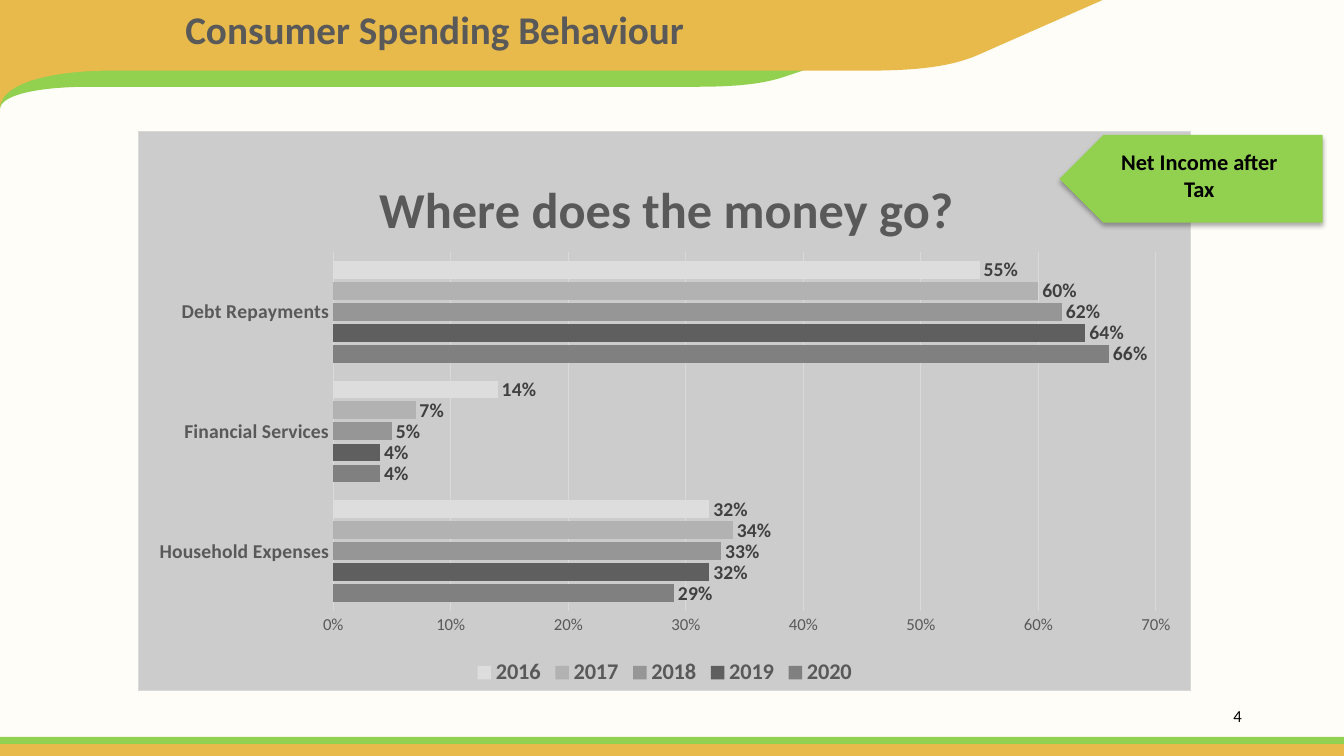
from lxml import etree
from pptx import Presentation
from pptx.chart.data import CategoryChartData
from pptx.dml.color import RGBColor
from pptx.enum import chart as kinds, shapes, text
from pptx.oxml import parse_xml
from pptx.oxml.ns import nsdecls, qn
from pptx.util import Cm, Pt

CREAM = RGBColor(0xFF, 0xFD, 0xF8)
GOLD = RGBColor(0xE7, 0xBA, 0x4B)
GREEN = RGBColor(0x92, 0xD0, 0x50)
BLACK = RGBColor(0, 0, 0)
GREY = RGBColor(0x59, 0x59, 0x59)
DARK = RGBColor(0x40, 0x40, 0x40)
PALE = RGBColor(0xD9, 0xD9, 0xD9)
PANEL = RGBColor(0xCC, 0xCC, 0xCC)
FONT = "Calibri"
WIDE, HIGH = 33.87, 19.05

GROUPS = ["Household Expenses", "Financial Services", "Debt Repayments"]
YEARS = [
    ("2020", (0.29, 0.04, 0.66), RGBColor(0x80, 0x80, 0x80)),
    ("2019", (0.32, 0.04, 0.64), RGBColor(0x5F, 0x5F, 0x5F)),
    ("2018", (0.33, 0.05, 0.62), RGBColor(0x96, 0x96, 0x96)),
    ("2017", (0.34, 0.07, 0.60), RGBColor(0xB2, 0xB2, 0xB2)),
    ("2016", (0.32, 0.14, 0.55), RGBColor(0xDD, 0xDD, 0xDD)),
]


def place(box):
    return [Cm(n) for n in box]


def style(font, size, color, bold=False):
    font.name, font.size, font.bold = FONT, Pt(size), bold
    font.color.rgb = color


def paint(shape, color):
    shape.shadow.inherit = False
    shape.fill.solid()
    shape.fill.fore_color.rgb = color
    shape.line.fill.background()


def write(shape, words, size, color, align, bold=False):
    frame = shape.text_frame
    frame.word_wrap = True
    frame.vertical_anchor = text.MSO_ANCHOR.TOP
    frame.text = words
    para = frame.paragraphs[0]
    para.alignment = align
    style(para.font, size, color, bold)


def curve(a, b, c, d, steps=24):
    for i in range(steps + 1):
        t = i / steps
        s = 1 - t
        yield tuple(s**3 * p + 3 * s * s * t * q + 3 * s * t * t * r + t**3 * v
                    for p, q, r, v in zip(a, b, c, d))


def wave(slide, box, color):
    left, top, width, height = box
    dots = [(0, 0), (1, 0),
            *curve((0.886, 0.51), (0.858, 0.63), (0.823, 0.65), (0.784, 0.65)),
            *curve((0.099, 0.65), (0.055, 0.65), (0, 0.74), (0, 1))]
    dots = [(Cm(left + x * width), Cm(top + y * height)) for x, y in dots]
    pen = slide.shapes.build_freeform(*dots[0])
    pen.add_line_segments(dots[1:], close=True)
    paint(pen.convert_to_shape(), color)


def header(slide, box):
    left, top, width, height = box
    wave(slide, (left, top + 1.12, width * 0.8, height * 0.6), GREEN)
    wave(slide, box, GOLD)
    title = slide.shapes.title
    slide.shapes._spTree.append(title._element)
    title.left, title.top, title.width, title.height = place((left, top, 21.9, 3))
    write(title, "Consumer Spending Behaviour", 28, GREY, text.PP_ALIGN.CENTER, True)


def footer(slide, box):
    left, top, width, height = box
    for drop, color in ((0, GREEN), (0.18, GOLD)):
        band = slide.shapes.add_shape(
            shapes.MSO_SHAPE.RECTANGLE,
            *place((left, top + drop, width, height - drop)))
        paint(band, color)
    page = slide.shapes.add_textbox(*place((left + 23.93, top - 0.92, 7.62, 1.02)))
    write(page, "4", 12, BLACK, text.PP_ALIGN.RIGHT)


def layout(node, x, y, size=None):
    old = node.find(qn("c:layout"))
    if old is not None:
        node.remove(old)
    parts = [("xMode", "edge"), ("yMode", "edge"), ("x", x), ("y", y)]
    if size:
        parts.insert(0, ("layoutTarget", "inner"))
        parts += zip("wh", size)
    new = parse_xml(f"<c:layout {nsdecls('c')}><c:manualLayout/></c:layout>")
    for name, val in parts:
        etree.SubElement(new[0], qn(f"c:{name}")).set("val", str(val))
    return new


def spending(slide, box):
    data = CategoryChartData(number_format="0%")
    data.categories = GROUPS
    for name, vals, _ in YEARS:
        data.add_series(name, vals)
    chart = slide.shapes.add_chart(
        kinds.XL_CHART_TYPE.BAR_CLUSTERED, *place(box), data).chart
    style(chart.font, 10, BLACK)

    chart.has_title = True
    head = chart.chart_title
    head.include_in_layout = False
    head.text_frame.text = "Where does the money go?"
    style(head.text_frame.paragraphs[0].font, 36, GREY, True)
    head._element.find(qn("c:tx")).addnext(layout(head._element, 0.22, 0.06))
    area = chart._chartSpace.chart.plotArea
    area.insert(0, layout(area, 0.185, 0.215, (0.782, 0.643)))

    chart.has_legend = True
    chart.legend.position = kinds.XL_LEGEND_POSITION.BOTTOM
    chart.legend.include_in_layout = False
    style(chart.legend.font, 16, GREY, True)

    plot = chart.plots[0]
    plot.gap_width, plot.overlap, plot.vary_by_categories = 100, -17, False
    for bar, (_, _, color) in zip(plot.series, YEARS):
        bar.format.fill.solid()
        bar.format.fill.fore_color.rgb = color
        tags = bar.data_labels
        tags.show_value = True
        tags.number_format, tags.number_format_is_linked = "0%", False
        tags.position = kinds.XL_LABEL_POSITION.OUTSIDE_END
        style(tags.font, 14, DARK, True)

    cats, vals = chart.category_axis, chart.value_axis
    for axis in (cats, vals):
        axis.major_tick_mark = axis.minor_tick_mark = kinds.XL_TICK_MARK.NONE
    style(cats.tick_labels.font, 14, GREY, True)
    style(vals.tick_labels.font, 12, GREY)
    vals.minimum_scale, vals.maximum_scale, vals.major_unit = 0, 0.7, 0.1
    vals.tick_labels.number_format = "0%"
    vals.tick_labels.number_format_is_linked = False
    vals.format.line.fill.background()
    vals.has_major_gridlines = True
    for line in (cats.format.line, vals.major_gridlines.format.line):
        line.color.rgb, line.width = PALE, Pt(0.75)

    back = parse_xml(
        f"<c:spPr {nsdecls('c', 'a')}>"
        f"<a:solidFill><a:srgbClr val='{PANEL}'/></a:solidFill>"
        f"<a:ln w='9525'><a:solidFill><a:srgbClr val='{PALE}'/></a:solidFill></a:ln>"
        "</c:spPr>")
    chart._chartSpace.chart.addnext(back)


def callout(slide, box):
    left, top, width, height = box
    tag = slide.shapes.add_shape(shapes.MSO_SHAPE.PENTAGON, *place(box))
    tag.rotation = 180
    paint(tag, GREEN)
    glow = tag._element.spPr.find(qn("a:effectLst"))
    glow.append(parse_xml(
        f"<a:outerShdw {nsdecls('a')} blurRad='44450' dist='27940' dir='5400000'"
        " algn='ctr' rotWithShape='0'><a:srgbClr val='000000'>"
        "<a:alpha val='32000'/></a:srgbClr></a:outerShdw>"))
    note = slide.shapes.add_textbox(
        *place((left + 1.24, top + 0.2, width - 2.06, height - 0.58)))
    write(note, "Net Income after Tax", 16, BLACK, text.PP_ALIGN.CENTER, True)


def main():
    deck = Presentation()
    deck.slide_width, deck.slide_height = Cm(WIDE), Cm(HIGH)
    slide = deck.slides.add_slide(deck.slide_layouts[5])
    slide.background.fill.solid()
    slide.background.fill.fore_color.rgb = CREAM
    footer(slide, (0, 18.57, WIDE, HIGH - 18.57))
    header(slide, (0, 0, 27.79, 2.74))
    spending(slide, (3.48, 3.3, 26.54, 14.12))
    callout(slide, (26.7, 3.4, 6.63, 2.21))
    deck.save("out.pptx")


if __name__ == "__main__":
    main()
